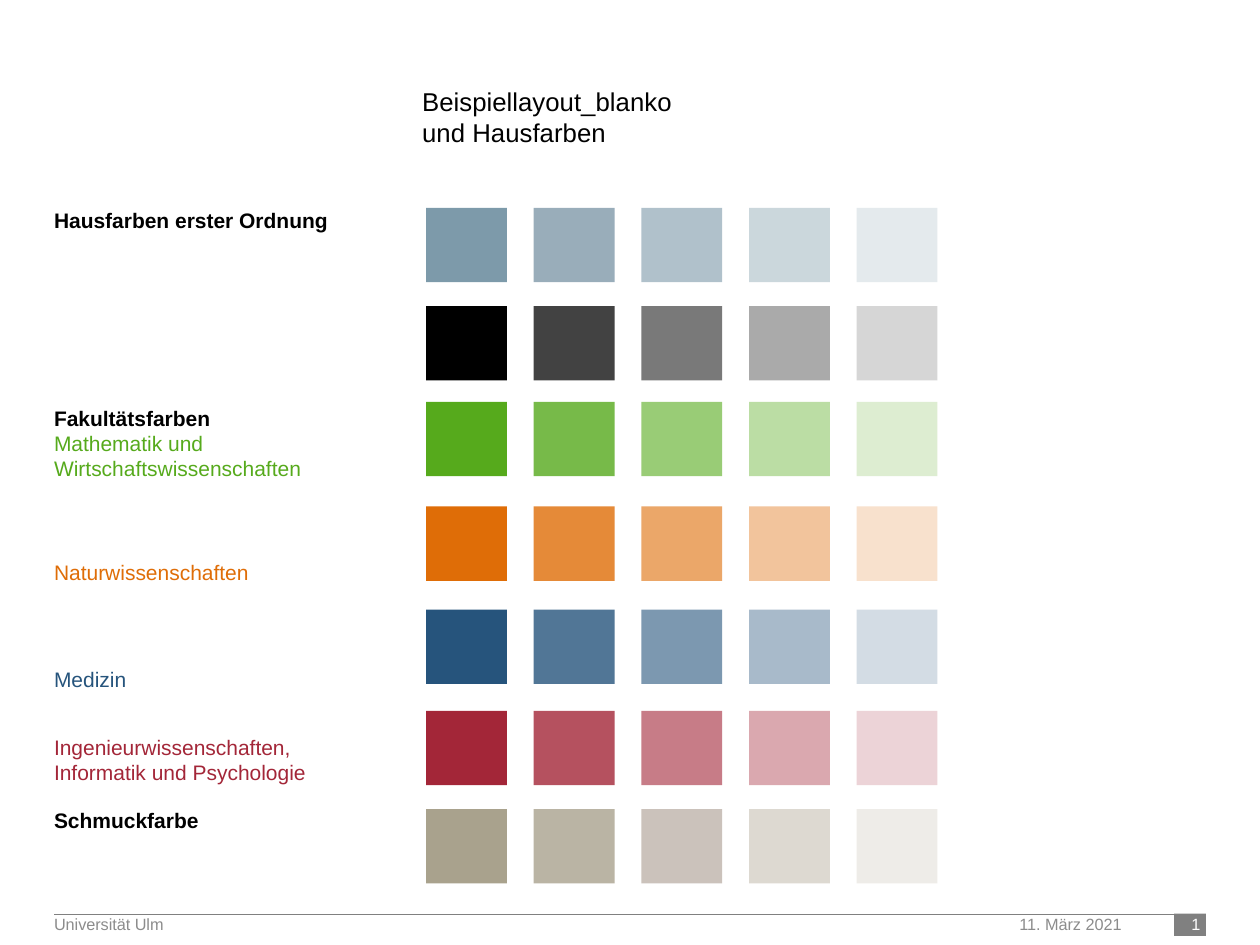
from typing import NamedTuple

from lxml import etree
from pptx import Presentation
from pptx import util as u
from pptx.dml.color import RGBColor
from pptx.enum import shapes, text
from pptx.oxml.ns import qn

FONT = "Arial"
BLACK, WHITE, GREY, FOOTER_GREY = "000000", "FFFFFF", "808080", "8C8C8C"
GREEN, ORANGE, BLUE, RED = "56AA1C", "DF6D07", "26547C", "A32638"

# Lengths in centimetres
MARGIN = 1.09
SWATCH_LEFT, SWATCH_PITCH = 8.59, 2.17
SWATCH_WIDTH, SWATCH_HEIGHT = 1.63, 1.5
FOOTER_TOP, FOOTER_HEIGHT = 18.44, 0.61


class SwatchRow(NamedTuple):
    top: float
    tints: tuple[str, ...]


class Label(NamedTuple):
    top: float
    wording: str
    color: str = BLACK
    bold: bool = False
    height: float = 0.51


class FooterItem(NamedTuple):
    left: float
    width: float
    wording: str
    color: str = FOOTER_GREY
    align: text.PP_ALIGN = text.PP_ALIGN.LEFT


SWATCH_ROWS = [
    SwatchRow(4.19, ("7D9AAA", "99ADBA", "B0C1CB", "CBD7DC", "E4EAED")),
    SwatchRow(6.17, (BLACK, "424242", "797979", "AAAAAA", "D6D6D6")),
    SwatchRow(8.1, (GREEN, "77BA49", "99CC76", "BBDDA4", "DDEDD1")),
    SwatchRow(10.21, (ORANGE, "E58A38", "EBA769", "F2C49C", "F8E1CD")),
    SwatchRow(12.29, (BLUE, "517696", "7C98B0", "A8BACA", "D3DCE4")),
    SwatchRow(14.33, (RED, "B5515F", "C77C87", "DAA8AF", "ECD3D7")),
    SwatchRow(16.31, ("A9A28D", "BAB4A4", "CBC2BB", "DDD9D1", "EEECE8")),
]
LABELS = [
    Label(4.19, "Hausfarben erster Ordnung", bold=True),
    Label(8.18, "Fakultätsfarben", bold=True),
    Label(8.69, "Mathematik und Wirtschaftswissenschaften", GREEN, height=1.02),
    Label(11.28, "Naturwissenschaften", ORANGE),
    Label(13.44, "Medizin", BLUE),
    Label(14.81, "Ingenieurwissenschaften, Informatik und Psychologie", RED, height=1.02),
    Label(16.28, "Schmuckfarbe", bold=True),
]
FOOTER_ITEMS = [
    FooterItem(20.55, 2.77, "11. März 2021"),
    FooterItem(MARGIN, 16.48, "Universität Ulm"),
    FooterItem(23.29, 0.91, "1", WHITE, text.PP_ALIGN.RIGHT),
]


def rgb(color: str) -> RGBColor:
    return RGBColor.from_string(color)


def prepare_frame(frame) -> None:
    frame.word_wrap = True
    frame.auto_size = text.MSO_AUTO_SIZE.NONE
    frame.vertical_anchor = text.MSO_ANCHOR.TOP
    frame.margin_left = frame.margin_right = frame.margin_top = frame.margin_bottom = 0


def write(paragraph, wording: str, size: float, color: str, bold: bool = False,
          align=text.PP_ALIGN.LEFT, line_points: float | None = None) -> None:
    paragraph.alignment = align
    if line_points:
        paragraph.line_spacing = u.Pt(line_points)
    run = paragraph.add_run()
    run.text = wording
    run.font.name = FONT
    run.font.size = u.Pt(size)
    run.font.bold = bold
    run.font.color.rgb = rgb(color)


def add_text(slide, left: float, top: float, width: float, height: float,
             wording: str, size: float, color: str, **style) -> None:
    box = slide.shapes.add_textbox(u.Cm(left), u.Cm(top), u.Cm(width), u.Cm(height))
    prepare_frame(box.text_frame)
    write(box.text_frame.paragraphs[0], wording, size, color, **style)


def add_block(slide, left: float, top: float, width: float, height: float, color: str) -> None:
    block = slide.shapes.add_shape(shapes.MSO_SHAPE.RECTANGLE,
                                   u.Cm(left), u.Cm(top), u.Cm(width), u.Cm(height))
    block.shadow.inherit = False
    block.fill.solid()
    block.fill.fore_color.rgb = rgb(color)
    block.line.fill.background()


def add_footer(slide) -> None:
    add_block(slide, 23.67, 18.42, 0.64, 0.45, GREY)
    rule = slide.shapes.add_connector(shapes.MSO_CONNECTOR.STRAIGHT,
                                      u.Cm(MARGIN), u.Cm(18.42), u.Cm(24.31), u.Cm(18.42))
    rule.line.color.rgb = rgb(GREY)
    rule.line.width = u.Pt(0.25)
    etree.SubElement(rule.line._get_or_add_ln().getparent(), qn("a:effectLst"))
    for item in FOOTER_ITEMS:
        add_text(slide, item.left, FOOTER_TOP, item.width, FOOTER_HEIGHT,
                 item.wording, 9.3, item.color, align=item.align)


def add_title(slide) -> None:
    title = slide.shapes.title
    title.left, title.top, title.width, title.height = map(u.Cm, (8.51, 1.73, 15.01, 1.24))
    frame = title.text_frame
    prepare_frame(frame)
    write(frame.paragraphs[0], "Beispiellayout_blanko", 14.7, BLACK, line_points=17.7)
    write(frame.add_paragraph(), "und Hausfarben", 14.7, BLACK, line_points=17.7)


def main() -> None:
    deck = Presentation()
    deck.slide_width, deck.slide_height = u.Cm(25.4), u.Cm(19.05)
    slide = deck.slides.add_slide(deck.slide_layouts[5])

    add_title(slide)
    add_footer(slide)

    # Colour grid: one row per house colour, tints from dark to light
    for row in SWATCH_ROWS:
        for column, tint in enumerate(row.tints):
            add_block(slide, SWATCH_LEFT + column * SWATCH_PITCH, row.top,
                      SWATCH_WIDTH, SWATCH_HEIGHT, tint)

    # Names of the colour groups
    for label in LABELS:
        add_text(slide, MARGIN, label.top, 6.45, label.height, label.wording, 12,
                 label.color, bold=label.bold, line_points=14.3)

    deck.save("out.pptx")


if __name__ == "__main__":
    main()
